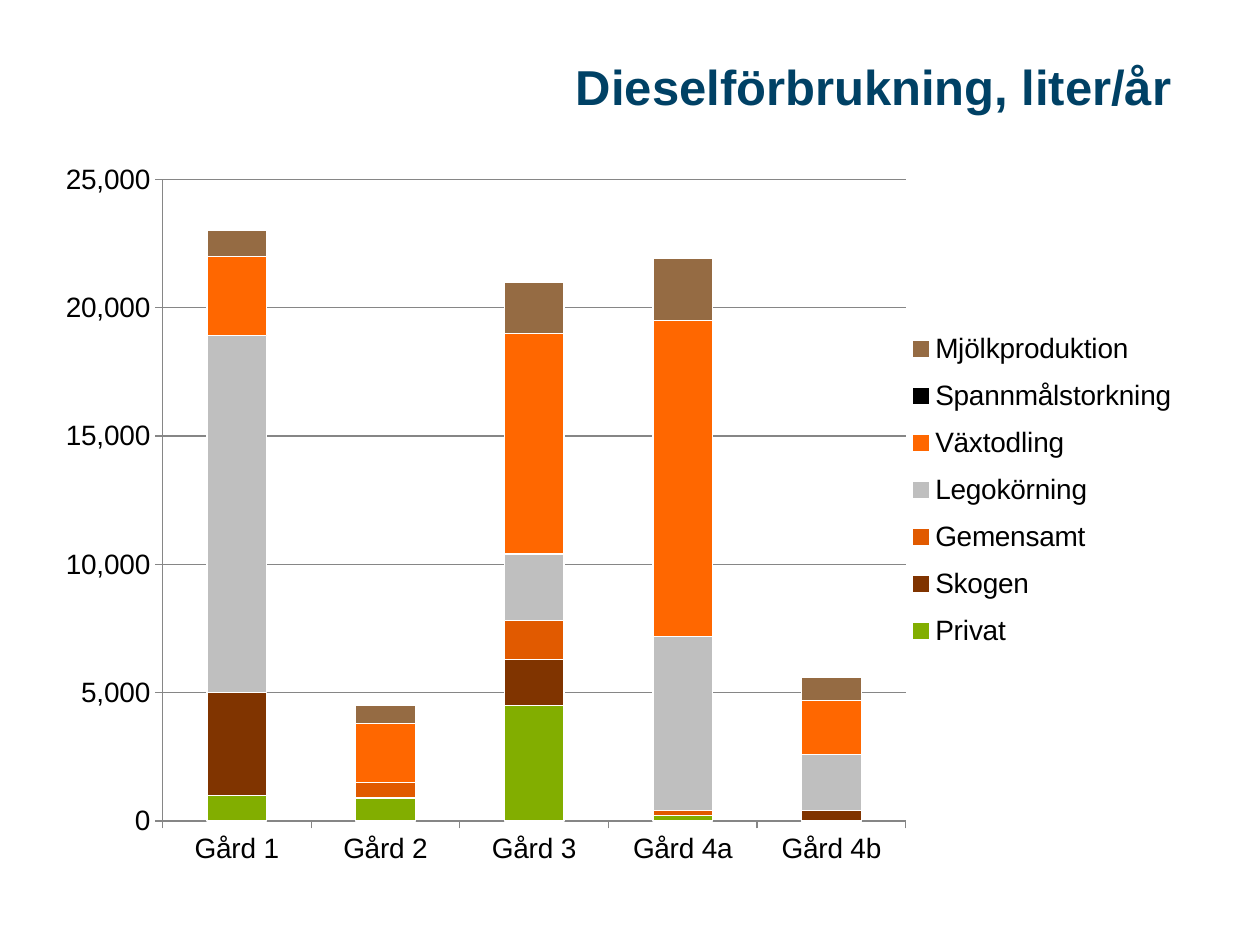
import pptx
import pptx.chart.data
import pptx.dml.color
import pptx.enum.chart
import pptx.enum.text
import pptx.oxml
import pptx.oxml.ns
import pptx.util

PX = 914400 / 126
FONT = "Arial"
FARMS = ["Gård 1", "Gård 2", "Gård 3", "Gård 4a", "Gård 4b"]
DIESEL_USES = [
    ("Privat", [1000, 900, 4500, 200, 0], "82AE00"),
    ("Skogen", [4000, 0, 1800, 0, 400], "803400"),
    ("Gemensamt", [0, 600, 1500, 200, 0], "E15A00"),
    ("Legokörning", [13900, 0, 2600, 6800, 2200], "BFBFBF"),
    ("Växtodling", [3100, 2300, 8600, 12300, 2100], "FF6700"),
    ("Spannmålstorkning", [0, 0, 0, 0, 0], "000000"),
    ("Mjölkproduktion", [1000, 700, 2000, 2400, 900], "956B43"),
]


def px(length):
    """Turn whole pixels into EMU."""
    return pptx.util.Emu(round(length * PX))


def color(hex_string):
    """Turn a hex string into a colour."""
    return pptx.dml.color.RGBColor.from_string(hex_string)


def style_line(line, hex_string, width):
    """Give a line its colour and its width in points."""
    line.color.rgb = color(hex_string)
    line.width = pptx.util.Pt(width)


def set_layout(element, index, fractions, inner=False):
    """Fix the place of a chart part as fractions of the chart."""
    for old_layout in element.findall(pptx.oxml.ns.qn("c:layout")):
        element.remove(old_layout)
    target = '<c:layoutTarget val="inner"/>' if inner else ""
    modes = '<c:xMode val="edge"/><c:yMode val="edge"/>'
    sizes = "".join(f'<c:{name} val="{value}"/>' for name, value in zip("xywh", fractions))
    element.insert(index, pptx.oxml.parse_xml(
        f'<c:layout {pptx.oxml.ns.nsdecls("c")}><c:manualLayout>'
        f"{target}{modes}{sizes}</c:manualLayout></c:layout>"))


def write_title(slide, left, top, width, height):
    """Place the heading in the title placeholder."""
    title = slide.shapes.title
    title.left, title.top, title.width, title.height = map(px, (left, top, width, height))
    frame = title.text_frame
    frame.word_wrap = True
    frame.vertical_anchor = pptx.enum.text.MSO_ANCHOR.MIDDLE
    paragraph = frame.paragraphs[0]
    paragraph.alignment = pptx.enum.text.PP_ALIGN.RIGHT
    run = paragraph.add_run()
    run.text = "Dieselförbrukning, liter/år"
    run.font.name = FONT
    run.font.size = pptx.util.Pt(28)
    run.font.bold = True
    run.font.color.rgb = color("004165")


def style_axes(chart):
    """Set the scale, ticks, lines and gridlines of both axes."""
    value_axis = chart.value_axis
    value_axis.minimum_scale = 0
    value_axis.maximum_scale = 25000
    value_axis.major_unit = 5000
    value_axis.tick_labels.number_format = "#,##0"
    value_axis.tick_labels.number_format_is_linked = False
    value_axis.has_major_gridlines = True
    style_line(value_axis.major_gridlines.format.line, "868686", 0.75)
    for axis in (value_axis, chart.category_axis):
        axis.major_tick_mark = pptx.enum.chart.XL_TICK_MARK.OUTSIDE
        axis.minor_tick_mark = pptx.enum.chart.XL_TICK_MARK.NONE
        style_line(axis.format.line, "868686", 0.75)


def add_diesel_chart(slide, left, top, width, height):
    """Add the stacked columns of diesel use on each farm."""
    data = pptx.chart.data.CategoryChartData()
    data.categories = FARMS
    for name, litres, _ in DIESEL_USES:
        data.add_series(name, litres)
    chart = slide.shapes.add_chart(
        pptx.enum.chart.XL_CHART_TYPE.COLUMN_STACKED,
        *map(px, (left, top, width, height)), data).chart
    chart.has_title = False
    chart.font.name = FONT
    chart.font.size = pptx.util.Pt(16)
    chart.font.color.rgb = color("000000")
    plot = chart.plots[0]
    plot.gap_width = 150
    plot.overlap = 100
    plot.vary_by_categories = False
    for series, (_, _, fill) in zip(plot.series, DIESEL_USES):
        series.format.fill.solid()
        series.format.fill.fore_color.rgb = color(fill)
        style_line(series.format.line, "FFFFFF", 0.75)
    style_axes(chart)
    chart.has_legend = True
    legend = chart.legend
    legend.position = pptx.enum.chart.XL_LEGEND_POSITION.RIGHT
    legend.include_in_layout = False
    set_layout(chart._chartSpace.chart.plotArea, 0, (0.104, 0.033, 0.652, 0.872), inner=True)
    set_layout(legend._element, 1, (0.76, 0.22, 0.24, 0.47))


def main():
    """Build the slide and save it."""
    presentation = pptx.Presentation()
    presentation.slide_width = px(1260)
    presentation.slide_height = px(945)
    slide = presentation.slides.add_slide(presentation.slide_layouts[5])
    write_title(slide, 267, 49, 917, 74)
    add_diesel_chart(slide, 44, 155, 1140, 736)
    presentation.save("out.pptx")


if __name__ == "__main__":
    main()
